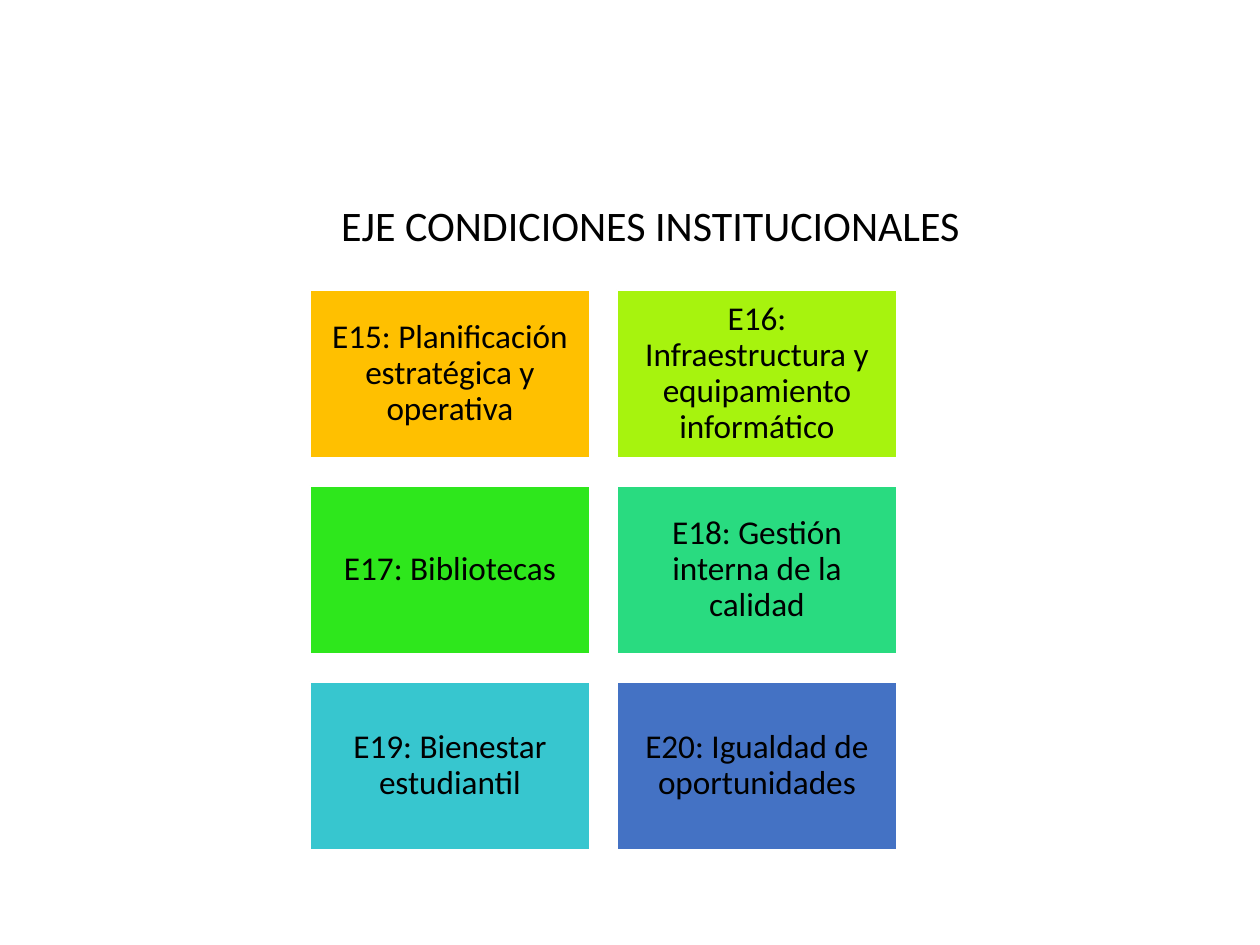
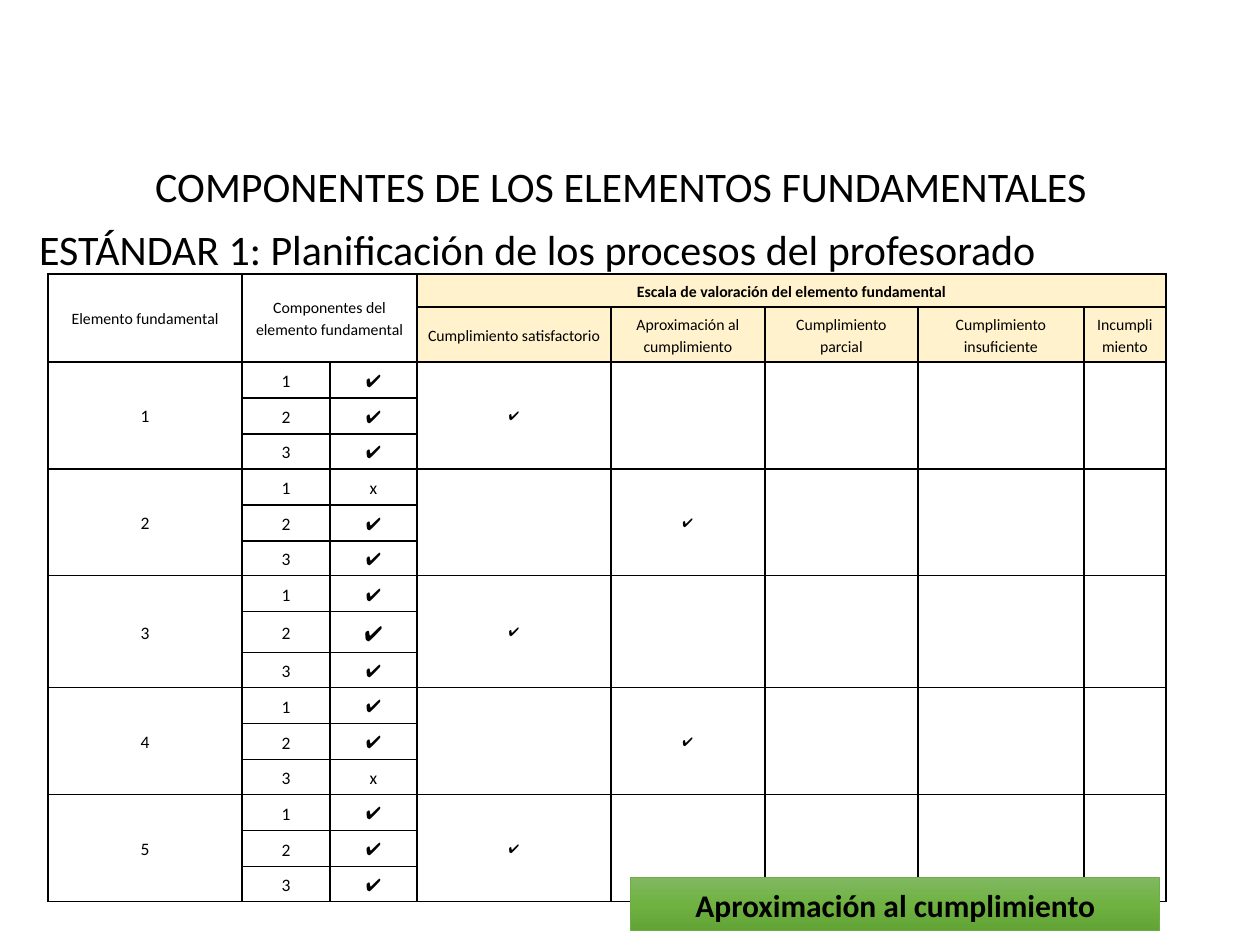
from dataclasses import dataclass

from lxml.etree import SubElement
from pptx import Presentation
from pptx.dml.color import RGBColor
from pptx.enum.shapes import MSO_SHAPE
from pptx.enum.text import MSO_ANCHOR, MSO_AUTO_SIZE, PP_ALIGN
from pptx.oxml.ns import qn
from pptx.util import Emu, Pt

EMU_PER_PX = 914400 / 126
BODY_FONT = "Calibri"
CHECK_FONT = "Karla"
CHECK = "✔"
TITLE_ONLY_LAYOUT = 5

COLORS = {
    "black": "000000",
    "white": "FFFFFF",
    "amber": "FFC000",
    "lime": "A7F30E",
    "green": "2EE71C",
    "mint": "29DB80",
    "cyan": "37C6CF",
    "blue": "4472C4",
    "scale header": "FFF2CC",
    "result line": "70AD47",
    "result top": "81B861",
    "result middle": "6FB242",
    "result bottom": "62A336",
}


@dataclass(frozen=True)
class Box:
    left: int
    top: int
    width: int
    height: int

    def emu(self) -> tuple:
        return tuple(px(n) for n in (self.left, self.top, self.width, self.height))


@dataclass(frozen=True)
class Standard:
    text: str
    color: str


@dataclass(frozen=True)
class Element:
    """A fundamental element: marks of its components and its place on the scale."""
    marks: tuple
    rating: int
    heights: tuple = (36, 36, 35)
    mark_sizes: tuple = (10, 10, 10)


STANDARDS = [
    Standard("E15: Planificación estratégica y operativa", "amber"),
    Standard("E16: Infraestructura y equipamiento informático", "lime"),
    Standard("E17: Bibliotecas", "green"),
    Standard("E18: Gestión interna de la calidad", "mint"),
    Standard("E19: Bienestar estudiantil", "cyan"),
    Standard("E20: Igualdad de oportunidades", "blue"),
]

SCALE = [
    "Cumplimiento satisfactorio",
    "Aproximación al cumplimiento",
    "Cumplimiento parcial",
    "Cumplimiento insuficiente",
    "Incumplimiento",
]

ELEMENTS = [
    Element((CHECK, CHECK, CHECK), 0),
    Element(("x", CHECK, CHECK), 1),
    Element((CHECK, CHECK, CHECK), 0, (36, 41, 35), (10, 12, 10)),
    Element((CHECK, CHECK, "x"), 1),
    Element((CHECK, CHECK, CHECK), 0),
]

COLUMN_WIDTHS = (194, 88, 87, 194, 154, 153, 166, 82)
HEADER_HEIGHTS = (33, 55)
FIRST_SCALE_COLUMN = 3


def px(length: int) -> Emu:
    return Emu(round(length * EMU_PER_PX))


def rgb(name: str) -> RGBColor:
    return RGBColor.from_string(COLORS[name])


def write(frame, text: str, size: int, bold: bool = False,
          font: str = BODY_FONT, spacing: float = 1.0) -> None:
    paragraph = frame.paragraphs[0]
    paragraph.alignment = PP_ALIGN.CENTER
    paragraph.line_spacing = spacing
    run = paragraph.add_run()
    run.text = text
    run.font.name = font
    run.font.size = Pt(size)
    run.font.bold = bold
    run.font.color.rgb = rgb("black")


def write_heading(shape, box: Box, text: str) -> None:
    shape.left, shape.top, shape.width, shape.height = box.emu()
    frame = shape.text_frame
    frame.word_wrap = False
    frame.auto_size = MSO_AUTO_SIZE.SHAPE_TO_FIT_TEXT
    frame.vertical_anchor = MSO_ANCHOR.TOP
    write(frame, text, 24)


def add_titled_slide(presentation, box: Box, title: str):
    slide = presentation.slides.add_slide(presentation.slide_layouts[TITLE_ONLY_LAYOUT])
    write_heading(slide.shapes.title, box, title)
    return slide


def add_rectangle(slide, box: Box, line_color: str, line_width: float):
    shape = slide.shapes.add_shape(MSO_SHAPE.RECTANGLE, *box.emu())
    shape.shadow.inherit = False
    shape.line.color.rgb = rgb(line_color)
    shape.line.width = Pt(line_width)
    frame = shape.text_frame
    frame.word_wrap = True
    frame.vertical_anchor = MSO_ANCHOR.MIDDLE
    return shape


def add_standard(slide, standard: Standard, box: Box) -> None:
    shape = add_rectangle(slide, box, "white", 1)
    shape.fill.solid()
    shape.fill.fore_color.rgb = rgb(standard.color)
    frame = shape.text_frame
    frame.margin_left = frame.margin_right = px(10)
    frame.margin_top = frame.margin_bottom = px(10)
    write(frame, standard.text, 19, spacing=0.9)


def add_result(slide, box: Box, text: str) -> None:
    shape = add_rectangle(slide, box, "result line", 0.5)
    shape.fill.gradient()
    shape.fill.gradient_angle = 270
    # Three gradient stops, from top to bottom
    stops = shape._element.spPr.find(qn("a:gradFill")).find(qn("a:gsLst"))
    for stop in list(stops):
        stops.remove(stop)
    for position, part in enumerate(("top", "middle", "bottom")):
        stop = SubElement(stops, qn("a:gs"), pos=str(position * 50000))
        SubElement(stop, qn("a:srgbClr"), val=COLORS[f"result {part}"])
    write(shape.text_frame, text, 18, bold=True)


def format_cell(cell) -> None:
    properties = cell._tc.get_or_add_tcPr()
    for side in ("lnL", "lnR", "lnT", "lnB"):
        border = SubElement(properties, qn(f"a:{side}"), w=str(Pt(1)))
        fill = SubElement(border, qn("a:solidFill"))
        SubElement(fill, qn("a:srgbClr"), val=COLORS["black"])
    cell.fill.background()
    cell.vertical_anchor = MSO_ANCHOR.MIDDLE
    cell.margin_left = cell.margin_right = px(11)
    cell.margin_top = cell.margin_bottom = px(5)
    # Small type in empty cells keeps the rows low
    if not cell.text_frame.text:
        SubElement(cell.text_frame.paragraphs[0]._p, qn("a:endParaRPr"), sz="700")


def fill_cell(cell, text: str, size: int = 9, bold: bool = False) -> None:
    font = CHECK_FONT if text == CHECK else BODY_FONT
    write(cell.text_frame, text, size, bold, font, 1.15)


def fill_header(table) -> None:
    table.cell(0, 0).merge(table.cell(1, 0))
    table.cell(0, 1).merge(table.cell(1, 2))
    table.cell(0, FIRST_SCALE_COLUMN).merge(table.cell(0, len(COLUMN_WIDTHS) - 1))
    fill_cell(table.cell(0, 0), "Elemento fundamental")
    fill_cell(table.cell(0, 1), "Componentes del elemento fundamental")
    fill_cell(table.cell(0, FIRST_SCALE_COLUMN),
              "Escala de valoración del elemento fundamental", bold=True)
    for column, label in enumerate(SCALE, FIRST_SCALE_COLUMN):
        fill_cell(table.cell(1, column), label)


def fill_element(table, number: int, element: Element) -> None:
    count = len(element.marks)
    top = len(HEADER_HEIGHTS) + (number - 1) * count
    for column in (0, *range(FIRST_SCALE_COLUMN, len(COLUMN_WIDTHS))):
        table.cell(top, column).merge(table.cell(top + count - 1, column))
    fill_cell(table.cell(top, 0), str(number), 10)
    for index, (mark, size) in enumerate(zip(element.marks, element.mark_sizes)):
        fill_cell(table.cell(top + index, 1), str(index + 1), 10)
        fill_cell(table.cell(top + index, 2), mark, size)
    fill_cell(table.cell(top, FIRST_SCALE_COLUMN + element.rating), CHECK, 7)


def add_rating_table(slide, left: int, top: int) -> None:
    heights = [*HEADER_HEIGHTS, *(h for element in ELEMENTS for h in element.heights)]
    box = Box(left, top, sum(COLUMN_WIDTHS), sum(heights))
    table = slide.shapes.add_table(len(heights), len(COLUMN_WIDTHS), *box.emu()).table
    table.first_row = table.horz_banding = False
    for column, width in zip(table.columns, COLUMN_WIDTHS):
        column.width = px(width)
    for row, height in zip(table.rows, heights):
        row.height = px(height)
    fill_header(table)
    for number, element in enumerate(ELEMENTS, 1):
        fill_element(table, number, element)
    for cell in table.iter_cells():
        format_cell(cell)
    for row in range(len(HEADER_HEIGHTS)):
        for column in range(FIRST_SCALE_COLUMN, len(COLUMN_WIDTHS)):
            cell = table.cell(row, column)
            cell.fill.solid()
            cell.fill.fore_color.rgb = rgb("scale header")


def build_standards_slide(presentation) -> None:
    slide = add_titled_slide(presentation, Box(326, 193, 649, 63),
                             "EJE CONDICIONES INSTITUCIONALES")
    for index, standard in enumerate(STANDARDS):
        row, column = divmod(index, 2)
        add_standard(slide, standard, Box(310 + column * 307, 290 + row * 196, 280, 168))


def build_components_slide(presentation) -> None:
    slide = add_titled_slide(presentation, Box(138, 154, 966, 63),
                             "COMPONENTES DE LOS ELEMENTOS FUNDAMENTALES")
    subtitle_box = Box(17, 217, 1041, 63)
    write_heading(slide.shapes.add_textbox(*subtitle_box.emu()), subtitle_box,
                  "ESTÁNDAR 1: Planificación de los procesos del profesorado")
    add_rating_table(slide, 48, 274)
    add_result(slide, Box(631, 878, 529, 53), "Aproximación al cumplimiento")


def main() -> None:
    presentation = Presentation()
    presentation.slide_width, presentation.slide_height = px(1260), px(945)
    build_standards_slide(presentation)
    build_components_slide(presentation)
    presentation.save("out.pptx")


if __name__ == "__main__":
    main()
